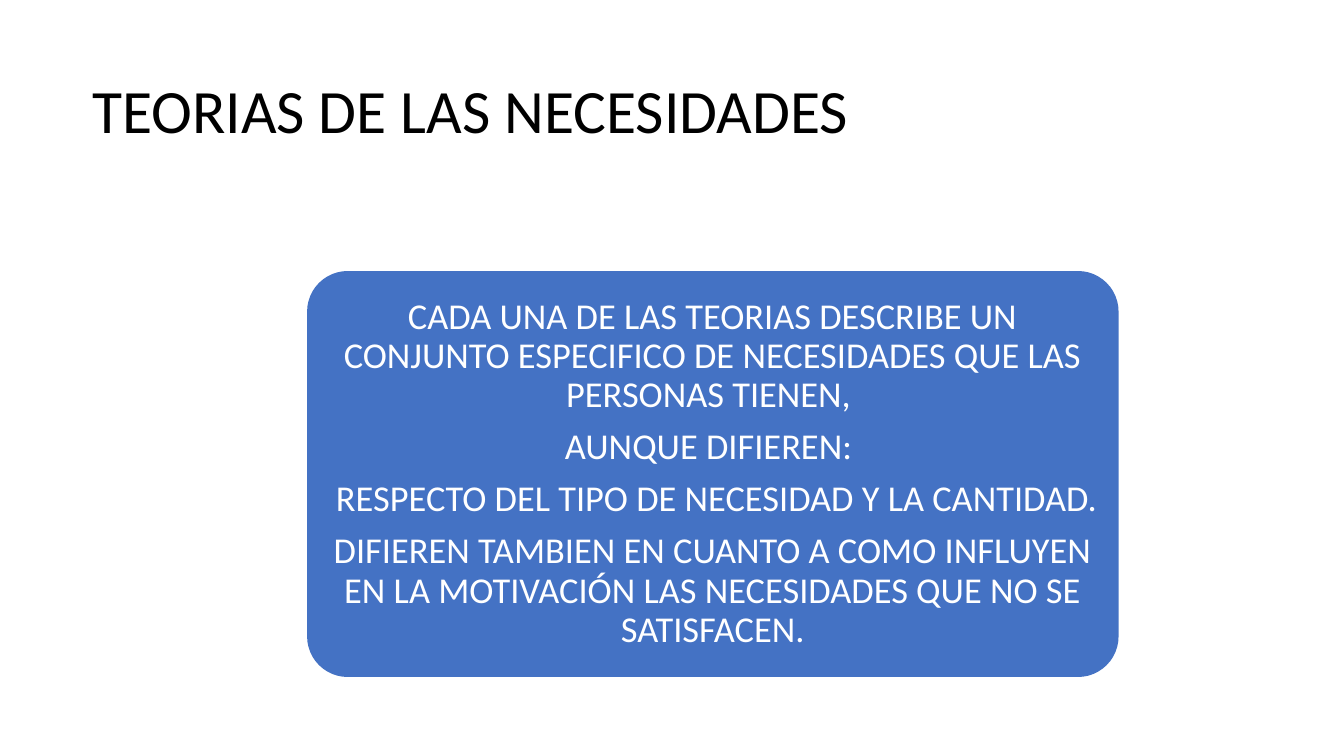
"""Builds the slide on theories of needs: a title above one rounded panel of text."""
from pptx import Presentation
from pptx.dml.color import RGBColor
from pptx.enum.shapes import MSO_SHAPE
from pptx.enum.text import MSO_ANCHOR, PP_ALIGN
from pptx.util import Cm, Pt

TITLE = ["TEORIAS DE LAS NECESIDADES"]
BODY = [
    "CADA UNA DE LAS TEORIAS DESCRIBE UN CONJUNTO ESPECIFICO DE NECESIDADES QUE LAS PERSONAS TIENEN, ",
    "AUNQUE DIFIEREN: ",
    " RESPECTO DEL TIPO DE NECESIDAD Y LA CANTIDAD. ",
    "DIFIEREN TAMBIEN EN CUANTO A COMO INFLUYEN EN LA MOTIVACIÓN LAS NECESIDADES QUE NO SE SATISFACEN.",
]

BLACK = RGBColor(0x00, 0x00, 0x00)
WHITE = RGBColor(0xFF, 0xFF, 0xFF)
BLUE = RGBColor(0x44, 0x72, 0xC4)

HEAD = (2.33, 1.01, 29.21, 3.68)
PANEL = (7.74, 6.83, 20.45, 10.23)
INSET = 0.29
CORNER = 0.1

HEAD_FONT = {"name": "Calibri", "size": Pt(44)}
BODY_FONT = {"name": "Calibri", "size": Pt(26)}
HEAD_PARA = {"alignment": PP_ALIGN.LEFT, "line_spacing": 0.9}
BODY_PARA = {"alignment": PP_ALIGN.CENTER, "line_spacing": 0.9, "space_after": Pt(9.1)}


def apply(item, values):
    for name, value in values.items():
        setattr(item, name, value)


def add_text(slide, box, lines, font, para, color, pad_x=0, pad_y=0):
    frame = slide.shapes.add_textbox(*map(Cm, box)).text_frame
    apply(frame, {
        "word_wrap": True,
        "vertical_anchor": MSO_ANCHOR.MIDDLE,
        "margin_left": Cm(pad_x),
        "margin_right": Cm(pad_x),
        "margin_top": Cm(pad_y),
        "margin_bottom": Cm(pad_y),
    })
    for i, line in enumerate(lines):
        part = frame.add_paragraph() if i else frame.paragraphs[0]
        apply(part, para)
        run = part.add_run()
        run.text = line
        apply(run.font, font)
        run.font.color.rgb = color


def add_panel(slide, box):
    panel = slide.shapes.add_shape(MSO_SHAPE.ROUNDED_RECTANGLE, *map(Cm, box))
    panel.adjustments[0] = CORNER
    panel.shadow.inherit = False
    panel.fill.solid()
    panel.fill.fore_color.rgb = BLUE
    panel.line.fill.background()


def main():
    deck = Presentation()
    apply(deck, {"slide_width": Cm(33.87), "slide_height": Cm(19.05)})
    slide = deck.slides.add_slide(deck.slide_layouts[6])
    add_text(slide, HEAD, TITLE, HEAD_FONT, HEAD_PARA, BLACK)
    add_panel(slide, PANEL)
    left, top, width, height = PANEL
    inner = (left + INSET, top + INSET, width - 2 * INSET, height - 2 * INSET)
    add_text(slide, inner, BODY, BODY_FONT, BODY_PARA, WHITE, 0.13, 0.1)
    deck.save("out.pptx")


if __name__ == "__main__":
    main()
